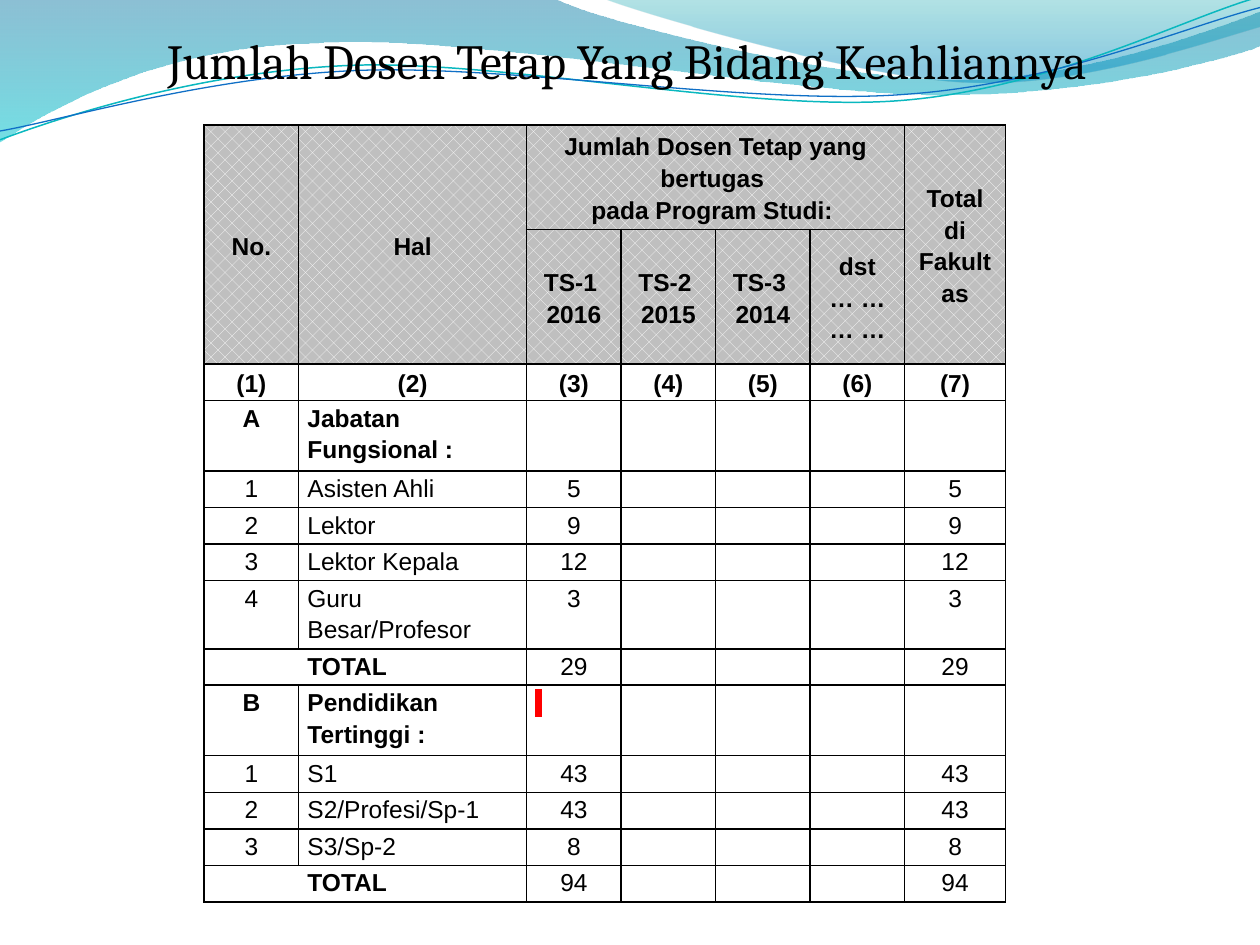
import lxml.etree
import pptx
import pptx.dml.color
import pptx.enum.dml
import pptx.enum.text
import pptx.oxml.ns
import pptx.util

Inches, Pt, qn = pptx.util.Inches, pptx.util.Pt, pptx.oxml.ns.qn
ALIGN, ANCHOR = pptx.enum.text.PP_ALIGN, pptx.enum.text.MSO_ANCHOR

TITLE = "Jumlah Dosen Tetap Yang Bidang Keahliannya"
HEADINGS = [
    ["No.", "Hal", "Jumlah Dosen Tetap yang bertugas \npada Program Studi: ",
     "", "", "", "Total di Fakultas"],
    ["", "", "TS-1 \n2016", "TS-2 \n2015", "TS-3 \n2014", "dst\n… … … …", ""],
]
HEADING_SPANS = [((0, 0), (1, 0)), ((0, 1), (1, 1)), ((0, 2), (0, 5)), ((0, 6), (1, 6))]
NUMBERING = [f"({n})" for n in range(1, 8)]
LECTURERS = [  # number, item, count (the same in the faculty total)
    ("A", "Jabatan Fungsional :", ""),
    ("1", "Asisten Ahli", "5"),
    ("2", "Lektor", "9"),
    ("3", "Lektor Kepala", "12"),
    ("4", "Guru Besar/Profesor", "3"),
    ("", "TOTAL", "29"),
    ("B", "Pendidikan Tertinggi :", ""),
    ("1", "S1", "43"),
    ("2", "S2/Profesi/Sp-1", "43"),
    ("3", "S3/Sp-2", "8"),
    ("", "TOTAL", "94"),
]
ROWS = HEADINGS + [NUMBERING] + [
    [number, item, count, "", "", "", count] for number, item, count in LECTURERS]
COLUMN_WIDTHS = [0.75, 1.81] + [0.75] * 4 + [0.8]
LINE_HEIGHT = 0.29
TALL_ROWS = {0: 0.83, 1: 1.07, 3: 0.56, 7: 0.54, 9: 0.56}
HEAVY_BELOW = {1, 7, 8, 13}
HIGHLIGHTED = (9, 2)

# Each wave: start point, then straight (2 numbers) or cubic (6 numbers) steps, in inches.
BANDS = [
    ([(0, 0), (4.4, -0.01), (4.76, 0.17, 6.64, 0.63, 7.58, 0.63),
      (8.53, 0.63, 9.58, 0.26, 10, 0.09), (10.01, 0.36),
      (9.83, 0.44, 8.7, 0.76, 7.46, 0.75), (6.22, 0.75, 3.82, 0.28, 2.57, 0.34),
      (1.29, 0.36, 0.46, 0.83, -0.01, 1.13), (0, 0)],
     [(0, "0074A1", 45), (1, "00C6CF", 55)]),
    ([(4.79, -0.01), (5.09, 0.11, 6.82, 0.62, 7.69, 0.65),
      (8.56, 0.69, 9.61, 0.32, 10, 0.21), (10, 0), (4.79, -0.01)],
     [(0, "00A1A9", 30), (0.8, "008BBF", 45)]),
]
STROKES = [
    ([(0, 1.11), (0.48, 0.93, 1.58, 0.57, 2.77, 0.52),
      (3.95, 0.47, 5.93, 0.89, 7.13, 0.8), (8.33, 0.71, 9.38, 0.15, 9.98, -0.02)],
     "0AB8BF", 0.85),
    ([(0, 1.04), (0.47, 0.96, 1.64, 0.61, 2.83, 0.56),
      (4.03, 0.51, 5.97, 0.84, 7.17, 0.75), (8.36, 0.67, 9.41, 0.21, 10, 0.06)],
     "0F6FC6", 0.75),
]


def rgb(value):
    return pptx.dml.color.RGBColor.from_string(value)


def bend(wave, steps):
    """Turn the straight segments of cubic steps into Bézier curves."""
    for segment, step in zip(list(wave.element.iter(qn("a:lnTo"))), steps[1:]):
        if len(step) == 2:
            continue
        curve = lxml.etree.Element(qn("a:cubicBezTo"))
        for x, y in zip(step[::2], step[1::2]):
            lxml.etree.SubElement(curve, qn("a:pt"), x=str(Inches(x) - wave.left),
                                  y=str(Inches(y) - wave.top))
        segment.getparent().replace(segment, curve)


def add_wave(slide, steps, closed, wave_id):
    """Build a wave and move it to the layout, behind the slide's content."""
    points = [(Inches(step[-2]), Inches(step[-1])) for step in steps]
    builder = slide.shapes.build_freeform(*points[0])
    builder.add_line_segments(points[1:], close=closed)
    wave = builder.convert_to_shape()
    bend(wave, steps)
    wave.shadow.inherit = False
    wave.element.xpath("p:nvSpPr/p:cNvPr")[0].set("id", str(wave_id))
    slide.slide_layout.shapes.element.append(wave.element)
    return wave


def add_waves(slide):
    for order, (steps, stops) in enumerate(BANDS):
        band = add_wave(slide, steps, True, 20 + order)
        band.line.fill.background()
        band.fill.gradient()
        band.fill.gradient_angle = 270
        for stop, (position, color, _) in zip(band.fill.gradient_stops, stops):
            stop.position = position
            stop.color.rgb = rgb(color)
        for color, (_, _, opacity) in zip(band.element.iter(qn("a:srgbClr")), stops):
            lxml.etree.SubElement(color, qn("a:alpha"), val=str(opacity * 1000))
    for order, (steps, color, width) in enumerate(STROKES):
        stroke = add_wave(slide, steps, False, 30 + order)
        stroke.fill.background()
        stroke.line.color.rgb = rgb(color)
        stroke.line.width = Pt(width)


def fill_title(title):
    title.left, title.top, title.width, title.height = map(Inches, (0.98, 0.19, 7.99, 0.57))
    title.text_frame.text = TITLE
    title.text_frame.word_wrap = False
    title.text_frame.vertical_anchor = ANCHOR.TOP
    heading = title.text_frame.paragraphs[0]
    heading.alignment = ALIGN.CENTER
    heading.font.name, heading.font.size = "Cambria", Pt(28)
    heading.font.color.rgb = rgb("000000")


def set_borders(cell, widths):
    """Draw black borders; widths maps L, R, T, B (in that order) to points."""
    properties = cell._tc.get_or_add_tcPr()
    for order, (side, width) in enumerate(widths.items()):
        border = lxml.etree.Element(qn(f"a:ln{side}"), w=str(Pt(width)))
        if width:
            solid = lxml.etree.SubElement(border, qn("a:solidFill"))
            lxml.etree.SubElement(solid, qn("a:srgbClr"), val="000000")
        else:
            lxml.etree.SubElement(border, qn("a:noFill"))
        properties.insert(order, border)


def fill_cell(cell, row, column):
    is_total = ROWS[row][1] == "TOTAL"
    is_item = row > 2 and column == 1
    is_highlighted = (row, column) == HIGHLIGHTED
    cell.text = chr(160) if is_highlighted else ROWS[row][column]
    cell.margin_left = cell.margin_right = Inches(0.07)
    cell.margin_top = cell.margin_bottom = 0
    cell.vertical_anchor = ANCHOR.MIDDLE if row < 3 else ANCHOR.TOP
    for paragraph in cell.text_frame.paragraphs:
        paragraph.alignment = ALIGN.LEFT if is_item or is_highlighted else ALIGN.CENTER
        paragraph.line_spacing = 1.15
        paragraph.font.name, paragraph.font.size = "Arial", Pt(14)
        paragraph.font.bold = row < 3 or ROWS[row][0] in ("A", "B") or (is_total and is_item)
        paragraph.font.color.rgb = rgb("000000")
        if not paragraph.runs:
            lxml.etree.SubElement(paragraph._p, qn("a:endParaRPr"), sz="1400")
    if is_highlighted:
        mark = cell.text_frame.paragraphs[0].runs[0].font._element
        highlight = lxml.etree.SubElement(mark, qn("a:highlight"))
        lxml.etree.SubElement(highlight, qn("a:srgbClr"), val="FF0000")

    if row < len(HEADINGS):
        cell.fill.patterned()
        cell.fill.pattern = pptx.enum.dml.MSO_PATTERN.PERCENT_25
        cell.fill.fore_color.rgb = rgb("FFFFFF")
        cell.fill.back_color.rgb = rgb("BFBFBF")
    elif row > 2 and column in (2, 6):
        cell.fill.solid()
        cell.fill.fore_color.rgb = rgb("FFFFFF")
    else:
        cell.fill.background()

    last_row = row + cell.span_height - 1
    set_borders(cell, {
        "L": 0 if is_total and column == 1 else 1,
        "R": 0 if is_total and column == 0 else 1,
        "T": 1.5 if row - 1 in HEAVY_BELOW else 1,
        "B": 1.5 if last_row in HEAVY_BELOW else 1,
    })


def add_lecturer_table(slide):
    heights = [TALL_ROWS.get(row, LINE_HEIGHT) for row in range(len(ROWS))]
    table = slide.shapes.add_table(
        len(ROWS), len(COLUMN_WIDTHS), Inches(1.62), Inches(0.99),
        Inches(sum(COLUMN_WIDTHS)), Inches(sum(heights))).table
    table.first_row = table.horz_banding = False
    for column, width in zip(table.columns, COLUMN_WIDTHS):
        column.width = Inches(width)
    for row, height in zip(table.rows, heights):
        row.height = Inches(height)
    for first, last in HEADING_SPANS:
        table.cell(*first).merge(table.cell(*last))
    for row in range(len(ROWS)):
        for column in range(len(COLUMN_WIDTHS)):
            fill_cell(table.cell(row, column), row, column)


def main():
    deck = pptx.Presentation()
    deck.slide_width, deck.slide_height = Inches(10), Inches(7.5)
    slide = deck.slides.add_slide(deck.slide_layouts.get_by_name("Title Only"))
    add_waves(slide)
    fill_title(slide.shapes.title)
    add_lecturer_table(slide)
    deck.save("out.pptx")


if __name__ == "__main__":
    main()
